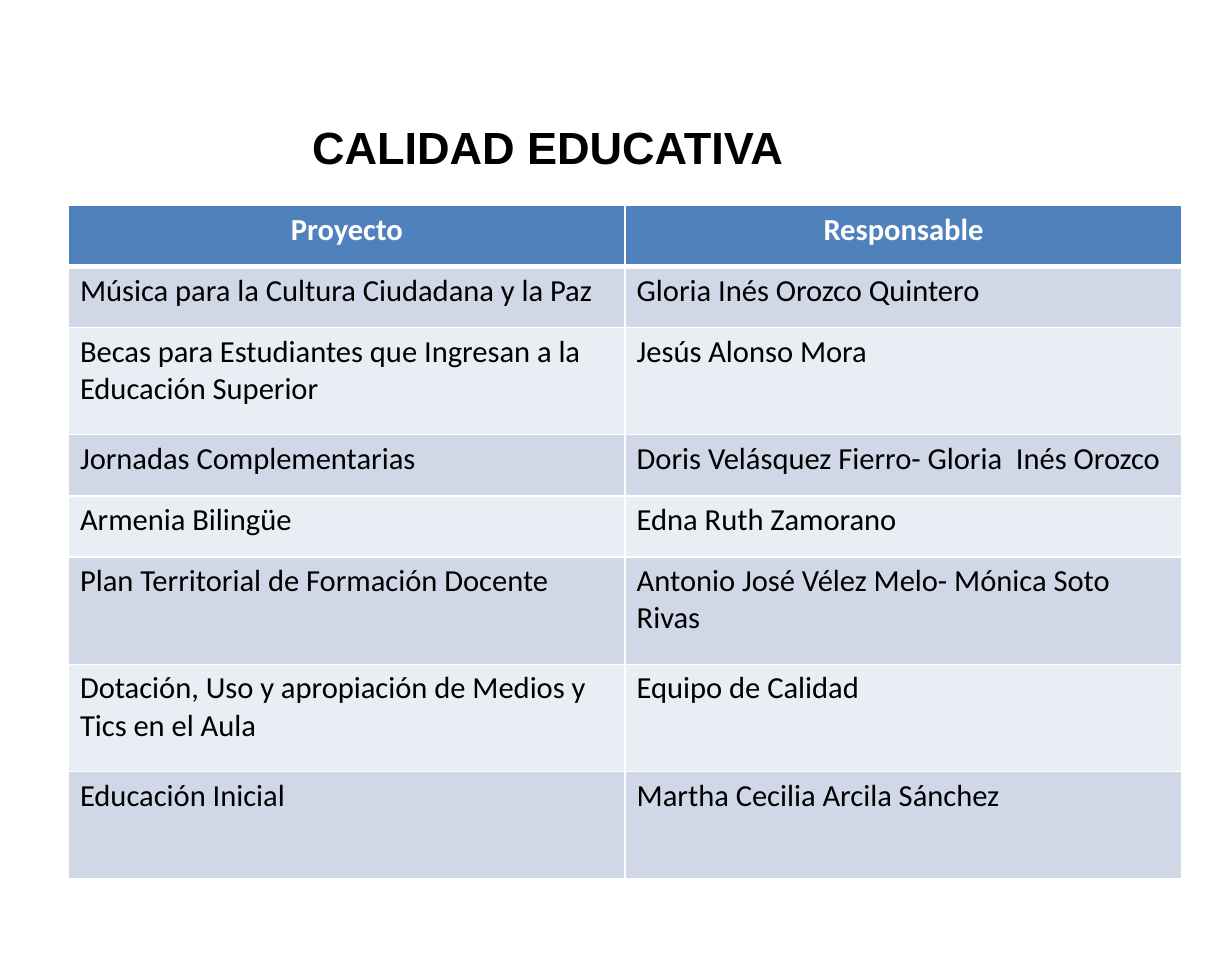
from lxml.etree import SubElement
from pptx import Presentation
from pptx.dml.color import RGBColor
from pptx.enum.text import MSO_AUTO_SIZE, PP_ALIGN
from pptx.oxml.ns import qn
from pptx.util import Cm, Pt

BLACK = RGBColor(0, 0, 0)
WHITE = RGBColor(255, 255, 255)
BLUE = RGBColor(0x4F, 0x81, 0xBD)
BANDS = RGBColor(0xE9, 0xED, 0xF4), RGBColor(0xD0, 0xD8, 0xE8)

LOW, HIGH = 1.34, 2.35
ROWS = [
    (LOW, "Proyecto", "Responsable"),
    (LOW, "Música para la Cultura Ciudadana y la Paz", "Gloria Inés Orozco Quintero"),
    (HIGH, "Becas para Estudiantes que Ingresan a la Educación Superior", "Jesús Alonso Mora"),
    (LOW, "Jornadas Complementarias", "Doris Velásquez Fierro- Gloria  Inés Orozco"),
    (LOW, "Armenia Bilingüe", "Edna Ruth Zamorano"),
    (HIGH, "Plan Territorial de Formación Docente", "Antonio José Vélez Melo- Mónica Soto Rivas"),
    (HIGH, "Dotación, Uso y apropiación de Medios y Tics en el Aula", "Equipo de Calidad"),
    (HIGH, "Educación Inicial", "Martha Cecilia Arcila Sánchez"),
]

TITLE = {"name": "Arial", "size": Pt(28), "bold": True}
HEAD = {"name": "Calibri", "size": Pt(19), "bold": True}
BODY = {"name": "Calibri", "size": Pt(19), "bold": False}


def write(frame, text, form, color, align):
    """Put one formatted paragraph in a text frame."""
    para = frame.paragraphs[0]
    para.alignment = align
    run = para.add_run()
    run.text = text
    for key, value in form.items():
        setattr(run.font, key, value)
    run.font.color.rgb = color


def edge(cell, widths):
    """Draw white cell borders, given points by side."""
    props = cell._tc.get_or_add_tcPr()
    for side, width in widths.items():
        line = SubElement(props, qn(f"a:ln{side}"), w=str(Pt(width)))
        fill = SubElement(line, qn("a:solidFill"))
        SubElement(fill, qn("a:srgbClr"), val=str(WHITE))


def add_title(slide, left, top, width, height):
    """Add the centred heading."""
    box = slide.shapes.add_textbox(Cm(left), Cm(top), Cm(width), Cm(height))
    frame = box.text_frame
    frame.word_wrap = True
    frame.auto_size = MSO_AUTO_SIZE.SHAPE_TO_FIT_TEXT
    write(frame, "CALIDAD EDUCATIVA", TITLE, BLACK, PP_ALIGN.CENTER)


def add_grid(slide, left, top, width):
    """Add the table of projects and the people in charge."""
    high = sum(row[0] for row in ROWS)
    grid = slide.shapes.add_table(
        len(ROWS), 2, Cm(left), Cm(top), Cm(width), Cm(high)).table
    for col in grid.columns:
        col.width = Cm(width / 2)
    for i, (tall, *texts) in enumerate(ROWS):
        grid.rows[i].height = Cm(tall)
        for j, text in enumerate(texts):
            cell = grid.cell(i, j)
            edge(cell, {"L": 1, "R": 1, "T": 3 if i == 1 else 1, "B": 1 if i else 3})
            cell.fill.solid()
            cell.fill.fore_color.rgb = BANDS[i % 2] if i else BLUE
            if i:
                write(cell.text_frame, text, BODY, BLACK, PP_ALIGN.LEFT)
            else:
                write(cell.text_frame, text, HEAD, WHITE, PP_ALIGN.CENTER)


def main():
    """Build and save the slide."""
    deck = Presentation()
    deck.slide_width, deck.slide_height = Cm(27), Cm(21)
    slide = deck.slides.add_slide(deck.slide_layouts[6])
    add_title(slide, 3.5, 2.5, 17, 1.45)
    add_grid(slide, 1.5, 4.5, 24.4)
    deck.save("out.pptx")


if __name__ == "__main__":
    main()
